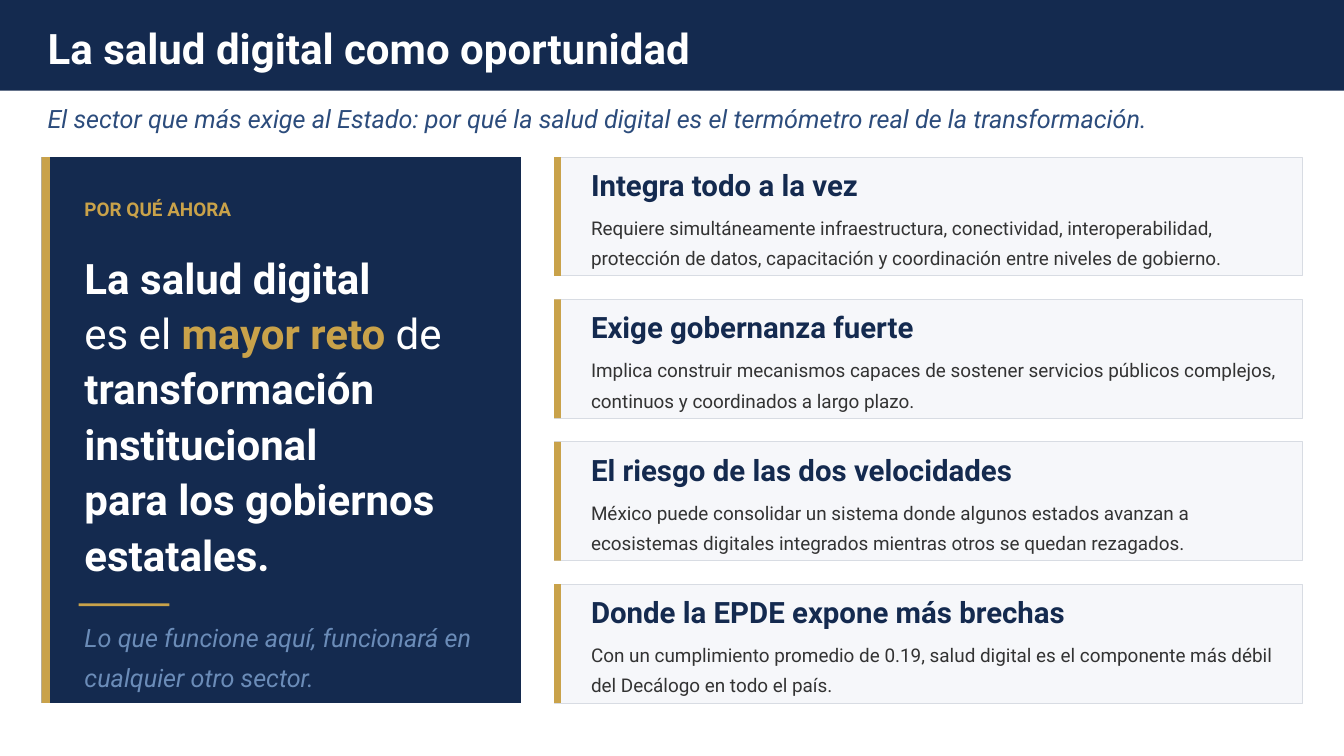
from pptx import Presentation
from pptx.dml.color import RGBColor
from pptx.enum.shapes import MSO_SHAPE
from pptx.enum.text import MSO_ANCHOR, MSO_AUTO_SIZE
from pptx.util import Cm, Pt

NAVY = RGBColor(0x14, 0x2A, 0x4F)
GOLD = RGBColor(0xC9, 0xA2, 0x4A)
WHITE = RGBColor(0xFF, 0xFF, 0xFF)
BLUE = RGBColor(0x2C, 0x4C, 0x7C)
PALE_BLUE = RGBColor(0x6B, 0x8C, 0xB8)
CARD_FILL = RGBColor(0xF6, 0xF7, 0xFA)
CARD_LINE = RGBColor(0xD8, 0xDC, 0xE3)
GREY = RGBColor(0x33, 0x33, 0x33)

# Run formats
TITLE = {"size": Pt(40), "bold": True, "color": WHITE}
LIGHT = {**TITLE, "bold": False}
ACCENT = {**TITLE, "color": GOLD}
SUBTITLE = {"size": Pt(24), "italic": True, "color": BLUE}
LABEL = {"size": Pt(18), "bold": True, "color": GOLD}
CLOSING = {**SUBTITLE, "color": PALE_BLUE}
CARD_TITLE = {"size": Pt(28), "bold": True, "color": NAVY}
CARD_BODY = {"size": Pt(18), "bold": False, "color": GREY}

# Paragraph formats
STATEMENT_SPACING = {"line_spacing": 1.1}
CLOSING_SPACING = {"line_spacing": 1.3}
BODY_SPACING = {"line_spacing": 1.35, "space_before": Pt(6)}

PANEL_TOP = 5.28
PANEL_HEIGHT = 18.34
CARD_LEFT = 18.62
CARD_HEIGHT = 3.99

STATEMENT = [
    [("La salud digital", TITLE)],
    [("es el ", LIGHT), ("mayor reto", ACCENT), (" de", LIGHT)],
    [("transformación institucional", TITLE)],
    [("para los gobiernos estatales.", TITLE)],
]

CARDS = [
    ("Integra todo a la vez",
     "Requiere simultáneamente infraestructura, conectividad, interoperabilidad, "
     "protección de datos, capacitación y coordinación entre niveles de gobierno."),
    ("Exige gobernanza fuerte",
     "Implica construir mecanismos capaces de sostener servicios públicos complejos, "
     "continuos y coordinados a largo plazo."),
    ("El riesgo de las dos velocidades",
     "México puede consolidar un sistema donde algunos estados avanzan a "
     "ecosistemas digitales integrados mientras otros se quedan rezagados."),
    ("Donde la EPDE expone más brechas",
     "Con un cumplimiento promedio de 0.19, salud digital es el componente más débil "
     "del Decálogo en todo el país."),
]


def add_box(slide, left, top, width, height, fill, line=None):
    shape = slide.shapes.add_shape(
        MSO_SHAPE.RECTANGLE, Cm(left), Cm(top), Cm(width), Cm(height))
    shape.shadow.inherit = False
    shape.fill.solid()
    shape.fill.fore_color.rgb = fill
    if line is None:
        shape.line.fill.background()
    else:
        shape.line.color.rgb = line
        shape.line.width = Pt(0.75)


def add_run(paragraph, text, run_format):
    font = paragraph.add_run()
    font.text = text
    font = font.font
    font.name = "Roboto"
    for name, value in run_format.items():
        if name == "color":
            font.color.rgb = value
        else:
            setattr(font, name, value)


def add_text(slide, left, top, width, height, paragraphs, anchor=MSO_ANCHOR.TOP):
    """Each paragraph is a pair: its runs and its spacing."""
    text_box = slide.shapes.add_textbox(Cm(left), Cm(top), Cm(width), Cm(height))
    frame = text_box.text_frame
    frame_format = {
        "word_wrap": True, "auto_size": MSO_AUTO_SIZE.SHAPE_TO_FIT_TEXT,
        "vertical_anchor": anchor,
        "margin_left": Cm(0.2), "margin_right": Cm(0.2),
        "margin_top": Cm(0.1), "margin_bottom": Cm(0.1),
    }
    for name, value in frame_format.items():
        setattr(frame, name, value)
    for index, (runs, spacing) in enumerate(paragraphs):
        paragraph = frame.add_paragraph() if index else frame.paragraphs[0]
        for name, value in spacing.items():
            setattr(paragraph, name, value)
        for text, run_format in runs:
            add_run(paragraph, text, run_format)


def add_header(slide, slide_width):
    add_box(slide, 0, 0, slide_width, 3.05, NAVY)
    add_text(slide, 1.4, 0.66, 42.37, 1.9,
             [([("La salud digital como oportunidad", TITLE)], {})], MSO_ANCHOR.MIDDLE)
    subtitle = ("El sector que más exige al Estado: por qué la salud digital "
                "es el termómetro real de la transformación.")
    add_text(slide, 1.4, 3.38, 42.37, 1.22, [([(subtitle, SUBTITLE)], {})])


def add_panel(slide):
    left, width = 2.64, 13.89
    add_box(slide, 1.4, PANEL_TOP, 16.1, PANEL_HEIGHT, NAVY)
    add_box(slide, 1.4, PANEL_TOP, 0.28, PANEL_HEIGHT, GOLD)
    add_text(slide, left, 6.53, width, 0.97, [([("POR QUÉ AHORA", LABEL)], {})])
    add_text(slide, left, 8.2, width, 11.38,
             [(runs, STATEMENT_SPACING) for runs in STATEMENT])
    add_box(slide, left, 20.27, 3.05, 0.1, GOLD)
    closing = "Lo que funcione aquí, funcionará en cualquier otro sector."
    add_text(slide, left, 20.52, width, 2.74, [([(closing, CLOSING)], CLOSING_SPACING)])


def add_card(slide, top, title, body):
    add_box(slide, CARD_LEFT, top, 25.15, CARD_HEIGHT, CARD_FILL, CARD_LINE)
    add_box(slide, CARD_LEFT, top, 0.23, CARD_HEIGHT, GOLD)
    add_text(slide, 19.66, top + 0.14, 23.5, 3.71,
             [([(title, CARD_TITLE)], STATEMENT_SPACING),
              ([(body, CARD_BODY)], BODY_SPACING)], MSO_ANCHOR.MIDDLE)


def main():
    slide_width = 45.16
    presentation = Presentation()
    presentation.slide_width = Cm(slide_width)
    presentation.slide_height = Cm(25.4)
    slide = presentation.slides.add_slide(presentation.slide_layouts[6])

    add_header(slide, slide_width)
    add_panel(slide)

    # Cards spread evenly over the height of the panel
    step = (PANEL_HEIGHT - CARD_HEIGHT) / (len(CARDS) - 1)
    for index, (title, body) in enumerate(CARDS):
        add_card(slide, PANEL_TOP + index * step, title, body)

    presentation.save("out.pptx")


if __name__ == "__main__":
    main()
